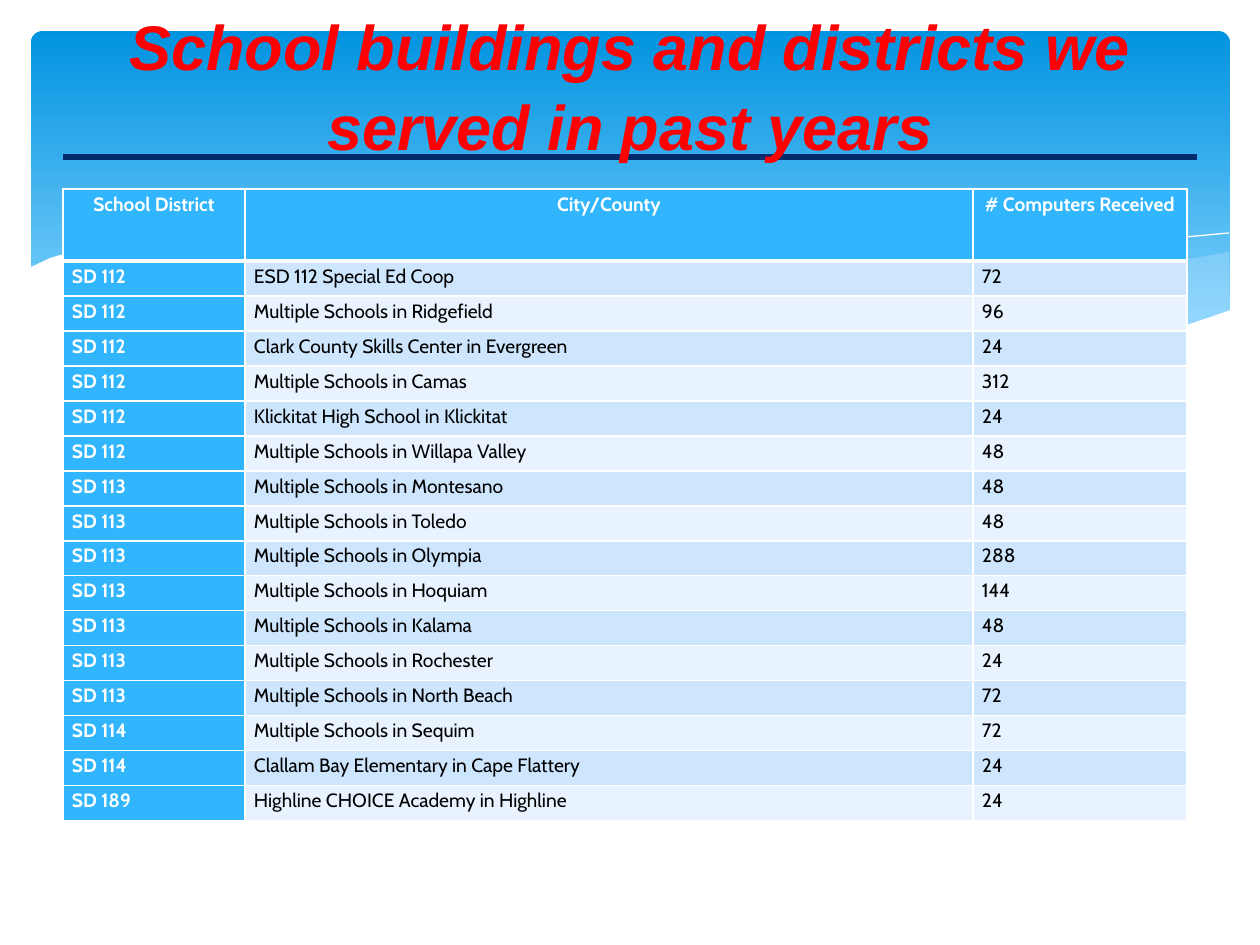
from lxml import etree
from pptx import Presentation
from pptx import util as u
from pptx.dml.color import RGBColor
from pptx.enum import shapes, text
from pptx.oxml.ns import qn

PX = 914400 / 126
WHITE = RGBColor(0xFF, 0xFF, 0xFF)
BLACK = RGBColor(0, 0, 0)
RED = RGBColor(0xFF, 0, 0)
NAVY = RGBColor(0x03, 0x2B, 0x6D)
DEEP = RGBColor(0x02, 0x93, 0xE0)
LIGHT = RGBColor(0x83, 0xD3, 0xFE)
PALE = RGBColor(0xC6, 0xE7, 0xFC)
BLUE = RGBColor(0x31, 0xB6, 0xFD)
BANDS = RGBColor(0xCE, 0xE5, 0xFE), RGBColor(0xE8, 0xF3, 0xFF)

# Wave points in px from the banner's top left corner
CREST = [(1198, 221), (1147, 230), (1092, 241), (1054, 250), (983, 268),
         (918, 281), (859, 293), (802, 303), (840, 308), (891, 314),
         (938, 318), (981, 319), (1032, 318), (1079, 313), (1119, 305),
         (1156, 295), (1199, 280)]
SWELL = [(1094, 313), (1024, 303), (946, 289), (859, 271), (762, 249),
         (705, 235), (651, 225), (602, 216), (526, 207), (448, 202),
         (402, 203), (329, 210), (400, 220), (478, 235), (535, 249),
         (637, 271), (726, 290), (807, 304), (879, 314), (943, 318),
         (1000, 319), (1049, 318)]
FALL = [(358, 215), (402, 208), (474, 205), (560, 207), (641, 213),
        (735, 226), (845, 245), (971, 273), (1112, 312)]
RISE = [(741, 293), (845, 265), (947, 241), (1060, 220), (1133, 208),
        (1198, 202)]
FLOOR = [(1200, 279), (1141, 299), (1087, 310), (1024, 317), (968, 317),
         (906, 314), (836, 307), (758, 294), (668, 278), (568, 255),
         (532, 246), (462, 230), (397, 217), (337, 208), (259, 202),
         (192, 201), (135, 203), (89, 210), (53, 217), (19, 227),
         (-2, 237), (-2, 384), (1200, 384)]

HEAD = ["School District", "City/County", "# Computers Received"]
ROWS = [
    (112, "ESD 112 Special Ed Coop", 72),
    (112, "Multiple Schools in Ridgefield", 96),
    (112, "Clark County Skills Center in Evergreen", 24),
    (112, "Multiple Schools in Camas", 312),
    (112, "Klickitat High School in Klickitat", 24),
    (112, "Multiple Schools in Willapa Valley", 48),
    (113, "Multiple Schools in Montesano", 48),
    (113, "Multiple Schools in Toledo", 48),
    (113, "Multiple Schools in Olympia", 288),
    (113, "Multiple Schools in Hoquiam", 144),
    (113, "Multiple Schools in Kalama", 48),
    (113, "Multiple Schools in Rochester", 24),
    (113, "Multiple Schools in North Beach", 72),
    (114, "Multiple Schools in Sequim", 72),
    (114, "Clallam Bay Elementary in Cape Flattery", 24),
    (189, "Highline CHOICE Academy in Highline", 24),
]


def px(*vals):
    return [round(v * PX) for v in vals]


def wave(group, box, points, close=True):
    pen = group.shapes.build_freeform(*points[0], scale=PX)
    pen.add_line_segments(points[1:], close=close)
    shape = pen.convert_to_shape(*px(*box[:2]))
    shape.shadow.inherit = False
    return shape


def banner(slide, box):
    """Blue gradient panel whose lower edge is cut by waves."""
    panel = slide.shapes.add_shape(
        shapes.MSO_SHAPE.ROUNDED_RECTANGLE, *px(*box))
    panel.adjustments[0] = 0.034
    panel.shadow.inherit = False
    panel.line.fill.background()
    panel.fill.gradient()
    panel.fill.gradient_angle = 270
    first, last = panel.fill.gradient_stops
    first.color.rgb, first.position = DEEP, 0
    last.color.rgb, last.position = LIGHT, 0.9

    group = slide.shapes.add_group_shape()
    for points, color, alpha in ((CREST, PALE, 29), (SWELL, PALE, 40),
                                 (FALL, None, 0), (RISE, None, 0),
                                 (FLOOR, WHITE, 100)):
        shape = wave(group, box, points, close=color is not None)
        if color is None:
            shape.fill.background()
            shape.line.color.rgb = WHITE
            shape.line.width = u.Pt(0)
            continue
        shape.line.fill.background()
        shape.fill.solid()
        shape.fill.fore_color.rgb = color
        if alpha < 100:
            tint = shape.fill._xPr.find(".//" + qn("a:srgbClr"))
            etree.SubElement(tint, qn("a:alpha"), val=str(alpha * 1000))


def title(slide, box):
    """Heading with a rule along the bottom of its box."""
    x, y, w, h = box
    rule = slide.shapes.add_connector(
        shapes.MSO_CONNECTOR.STRAIGHT, *px(x, y + h, x + w, y + h))
    rule.line.color.rgb = NAVY
    rule.line.width = u.Pt(3)
    etree.SubElement(rule._element.spPr, qn("a:effectLst"))

    frame = slide.shapes.add_textbox(*px(*box)).text_frame
    frame.word_wrap = True
    frame.vertical_anchor = text.MSO_ANCHOR.MIDDLE
    para = frame.paragraphs[0]
    para.text = "School buildings and districts we served in past years"
    para.alignment = text.PP_ALIGN.CENTER
    para.line_spacing = 1.05
    font = para.font
    font.name, font.size = "Arial", u.Pt(36)
    font.bold = font.italic = True
    font.color.rgb = RED


def border(cell, widths):
    """White cell edges; widths in points for left, right, top, bottom."""
    props = cell._tc.get_or_add_tcPr()
    for spot, (side, width) in enumerate(zip("LRTB", widths)):
        edge = etree.Element(qn(f"a:ln{side}"), w=str(u.Pt(width)))
        fill = etree.SubElement(edge, qn("a:solidFill"))
        etree.SubElement(fill, qn("a:srgbClr"), val=str(WHITE))
        props.insert(spot, edge)


def fill_cell(cell, words, back, strong, center, widths):
    cell.margin_left = cell.margin_right = px(9)[0]
    cell.margin_top = cell.margin_bottom = 0
    cell.fill.solid()
    cell.fill.fore_color.rgb = back
    border(cell, widths)
    para = cell.text_frame.paragraphs[0]
    para.text = words
    para.line_spacing = 1.15
    if center:
        para.alignment = text.PP_ALIGN.CENTER
    font = para.font
    font.name, font.size, font.bold = "Cabin", u.Pt(11), strong
    font.color.rgb = WHITE if strong else BLACK


def district_table(slide, box):
    data = [HEAD] + [(f"SD {sd}", place, str(n)) for sd, place, n in ROWS]
    table = slide.shapes.add_table(len(data), len(HEAD), *px(*box)).table
    for col, width in zip(table.columns, px(182, 728, 214)):
        col.width = width
    for r, row in enumerate(data):
        head = r == 0
        table.rows[r].height = px(72 if head else 35)[0]
        widths = (1, 1, 3 if r == 1 else 1, 3 if head else 1)
        for c, words in enumerate(row):
            strong = head or c == 0
            back = BLUE if strong else BANDS[(r - 1) % 2]
            fill_cell(table.cell(r, c), words, back, strong, head, widths)


def main():
    deck = Presentation()
    deck.slide_width, deck.slide_height = px(1260, 945)
    slide = deck.slides.add_slide(deck.slide_layouts[6])
    banner(slide, (31, 31, 1199, 340))
    district_table(slide, (63, 189, 1124, 632))
    title(slide, (63, 10, 1134, 147))
    deck.save("out.pptx")


if __name__ == "__main__":
    main()
